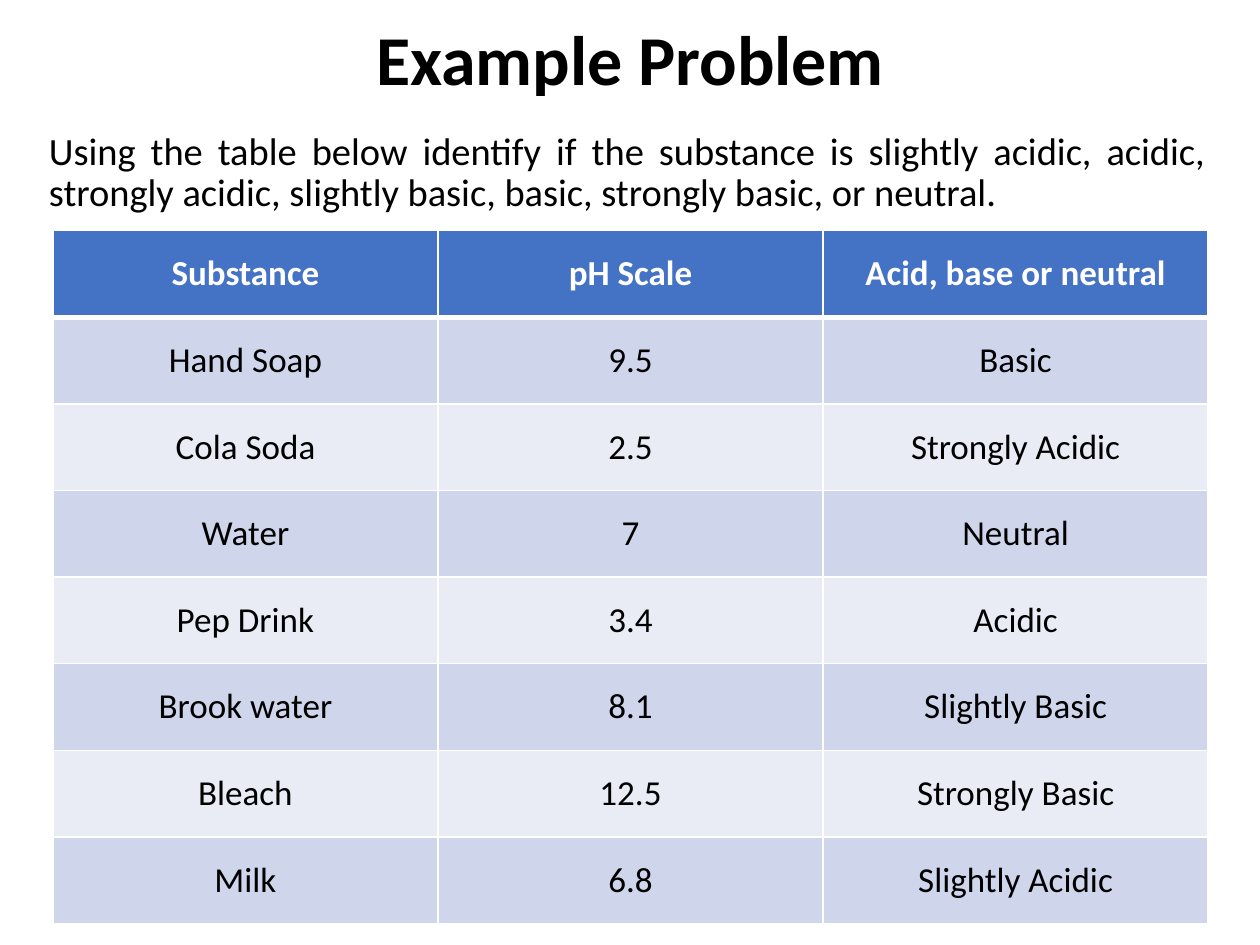
from lxml.etree import SubElement
from pptx import Presentation
from pptx.dml.color import RGBColor
from pptx.enum.text import MSO_ANCHOR as Anchor, PP_ALIGN as Align
from pptx.oxml.ns import qn
from pptx.util import Inches, Pt

COLORS = {
    "text": "000000",
    "white": "FFFFFF",
    "header": "4472C4",
    "odd_row": "CFD5EA",
    "even_row": "E9EBF5",
}

INSTRUCTION = (
    "Using the table below identify if the substance is slightly acidic, acidic, "
    "strongly acidic, slightly basic, basic, strongly basic, or neutral."
)

SUBSTANCES = [
    ("Substance", "pH Scale", "Acid, base or neutral"),
    ("Hand Soap", "9.5", "Basic"),
    ("Cola Soda", "2.5", "Strongly Acidic"),
    ("Water", "7", "Neutral"),
    ("Pep Drink", "3.4", "Acidic"),
    ("Brook water", "8.1", "Slightly Basic"),
    ("Bleach", "12.5", "Strongly Basic"),
    ("Milk", "6.8", "Slightly Acidic"),
]


class SlideBuilder:
    """Holds the style and the current slide."""

    font = "Calibri"

    def __init__(self, slide):
        self.slide = slide

    def set_text(self, text_frame, text, size, color="text", bold=False, align=Align.CENTER):
        text_frame.text = text
        paragraph = text_frame.paragraphs[0]
        paragraph.alignment = align
        font = paragraph.runs[0].font
        font.name, font.size, font.bold = self.font, Pt(size), bold
        font.color.rgb = RGBColor.from_string(COLORS[color])
        return paragraph

    def title(self, text, left, top, width, height):
        shape = self.slide.shapes.title
        shape.left, shape.top = Inches(left), Inches(top)
        shape.width, shape.height = Inches(width), Inches(height)
        shape.text_frame.vertical_anchor = Anchor.MIDDLE
        paragraph = self.set_text(shape.text_frame, text, 40, bold=True)
        paragraph.line_spacing = 0.9

    def body(self, text, left, top, width, height, indent):
        shape = self.slide.shapes.add_textbox(
            Inches(left), Inches(top), Inches(width), Inches(height))
        text_frame = shape.text_frame
        text_frame.word_wrap = True
        paragraph = self.set_text(text_frame, text, 22, align=Align.JUSTIFY)
        paragraph.line_spacing = 0.9
        paragraph.space_before = Pt(7.5)
        paragraph._p.get_or_add_pPr().set("marL", str(Inches(indent)))

    def borders(self, cell, widths):
        properties = cell._tc.get_or_add_tcPr()
        for side, width in widths.items():
            line = SubElement(properties, qn(f"a:ln{side}"), w=str(Pt(width)))
            fill = SubElement(line, qn("a:solidFill"))
            SubElement(fill, qn("a:srgbClr"), val=COLORS["white"])

    def table(self, rows, left, top, width, height):
        table = self.slide.shapes.add_table(
            len(rows), len(rows[0]), Inches(left), Inches(top),
            Inches(width), Inches(height)).table
        for row_index, row in enumerate(rows):
            is_header = row_index == 0
            fill = "header" if is_header else "odd_row" if row_index % 2 else "even_row"
            widths = {
                "L": 1,
                "R": 1,
                "T": 3 if row_index == 1 else 1,
                "B": 3 if is_header else 1,
            }
            for column_index, text in enumerate(row):
                cell = table.cell(row_index, column_index)
                cell.vertical_anchor = Anchor.MIDDLE
                self.borders(cell, widths)
                cell.fill.solid()
                cell.fill.fore_color.rgb = RGBColor.from_string(COLORS[fill])
                self.set_text(cell.text_frame, text, 20,
                              "white" if is_header else "text", is_header)


def main():
    presentation = Presentation()
    presentation.slide_width, presentation.slide_height = Inches(10), Inches(7.5)
    title_only = presentation.slide_layouts[5]
    builder = SlideBuilder(presentation.slides.add_slide(title_only))

    # Heading and instruction
    builder.title("Example Problem", 0, 0, 10, 1)
    builder.body(INSTRUCTION, 0.17, 1, 9.5, 4.83, indent=0.12)

    # Substances with their pH and class
    builder.table(SUBSTANCES, 0.42, 1.83, 9.17, 5.5)

    presentation.save("out.pptx")


if __name__ == "__main__":
    main()
